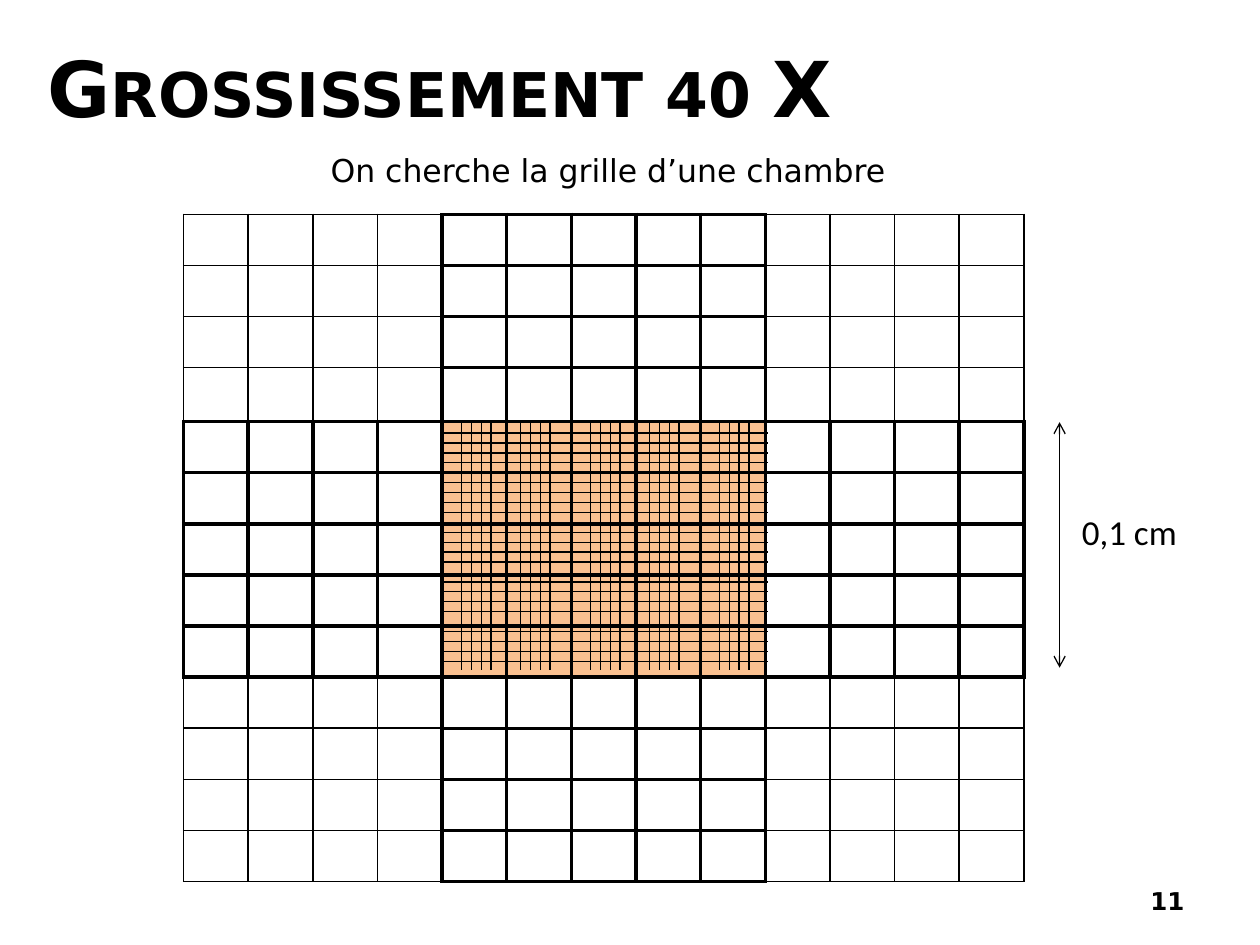
from lxml.etree import SubElement
from pptx import Presentation
from pptx.dml.color import RGBColor
from pptx.enum.shapes import MSO_CONNECTOR as Connector
from pptx.enum.text import MSO_ANCHOR as Anchor, PP_ALIGN as Align
from pptx.oxml.ns import qn
from pptx.util import Cm, Pt

BLACK = "000000"
ORANGE = "FAC090"
GRID_SIZE = 13
GRID_LEFT, GRID_TOP, GRID_WIDTH = 3.7, 4.32, 16.94
ROW_HEIGHT, TALL_ROW, TALL_ROW_HEIGHT = 1.03, 3, 1.09
FINE_STEP = 0.2


def color(hex_string):
    """Turn a hex string into a colour."""
    return RGBColor.from_string(hex_string)


def add_text(slide, text, box, size, font="DejaVu Sans", bold=False,
             align=Align.LEFT, anchor=Anchor.TOP, small_caps=False):
    """Add a one-paragraph text box; box is left, top, width, height in cm."""
    frame = slide.shapes.add_textbox(*map(Cm, box)).text_frame
    frame.word_wrap = True
    frame.vertical_anchor = anchor
    paragraph = frame.paragraphs[0]
    paragraph.alignment = align
    paragraph.font.name = font
    paragraph.font.size = Pt(size)
    paragraph.font.bold = bold
    paragraph.font.color.rgb = color(BLACK)
    run = paragraph.add_run()
    run.text = text
    if small_caps:
        run._r.get_or_add_rPr().set("cap", "small")


def add_line(slide, start, end, arrows=False):
    """Add a thin black line between two points in cm."""
    connector = slide.shapes.add_connector(
        Connector.STRAIGHT, *map(Cm, (*start, *end)))
    connector.line.width = Pt(0.75)
    connector.line.color.rgb = color(BLACK)
    properties = connector._element.spPr
    if arrows:
        outline = properties.find(qn("a:ln"))
        for tag in ("a:headEnd", "a:tailEnd"):
            SubElement(outline, qn(tag), type="arrow")
    SubElement(properties, qn("a:effectLst"))


def in_band(index):
    """Tell whether a row or column belongs to the central band."""
    return 4 <= index <= 8


def add_borders(cell, row, column):
    """Draw heavy borders on the central cross and light ones elsewhere."""
    neighbours = {"a:lnL": (row, column - 1), "a:lnR": (row, column + 1),
                  "a:lnT": (row - 1, column), "a:lnB": (row + 1, column)}
    properties = cell._tc.get_or_add_tcPr()
    for tag, neighbour in neighbours.items():
        heavy = any(map(in_band, (row, column, *neighbour)))
        border = SubElement(properties, qn(tag), w=str(Pt(2.25 if heavy else 1)))
        fill = SubElement(border, qn("a:solidFill"))
        SubElement(fill, qn("a:srgbClr"), val=BLACK)


def add_grid(slide):
    """Add the counting grid with its coloured centre."""
    heights = [ROW_HEIGHT] * GRID_SIZE
    heights[TALL_ROW] = TALL_ROW_HEIGHT
    table = slide.shapes.add_table(
        GRID_SIZE, GRID_SIZE, Cm(GRID_LEFT), Cm(GRID_TOP),
        Cm(GRID_WIDTH), Cm(sum(heights))).table
    table.first_row = False
    table.horz_banding = False
    for row, height in enumerate(heights):
        table.rows[row].height = Cm(height)
        for column in range(GRID_SIZE):
            cell = table.cell(row, column)
            cell.margin_top = cell.margin_bottom = 0
            add_borders(cell, row, column)
            if in_band(row) and in_band(column):
                cell.fill.solid()
                cell.fill.fore_color.rgb = color(ORANGE)
            else:
                cell.fill.background()


def add_fine_lines(slide):
    """Add five groups of four fine lines in each direction."""
    for group in range(5):
        first_x = 9.3 + group // 2 * 2.6 + group % 2 * 1.19
        for step in range(4):
            x = first_x + step * FINE_STEP
            add_line(slide, (x, 8.53), (x, 13.5))
    for group in range(5):
        for step in range(4):
            y = 8.73 + group + step * FINE_STEP
            add_line(slide, (8.89, y), (15.49, y))


def main():
    """Build the slide and save it."""
    presentation = Presentation()
    presentation.slide_width, presentation.slide_height = Cm(25.4), Cm(19.05)
    slide = presentation.slides.add_slide(presentation.slide_layouts[6])
    add_text(slide, "Grossissement 40 X", (0.71, 0.15, 22.86, 3.18), 44,
             bold=True, anchor=Anchor.MIDDLE, small_caps=True)
    add_text(slide, "11", (18.21, 17.65, 5.92, 1.02), 14, bold=True,
             align=Align.RIGHT, anchor=Anchor.MIDDLE)
    add_grid(slide)
    add_line(slide, (21.36, 8.51), (21.36, 13.46), arrows=True)
    add_text(slide, "0,1 cm", (21.56, 10.16, 2.77, 1.12), 20, font="Calibri")
    add_text(slide, "On cherche la grille d’une chambre",
             (5.11, 2.92, 14.3, 1.02), 18, align=Align.CENTER)
    add_fine_lines(slide)
    presentation.save("out.pptx")


if __name__ == "__main__":
    main()
